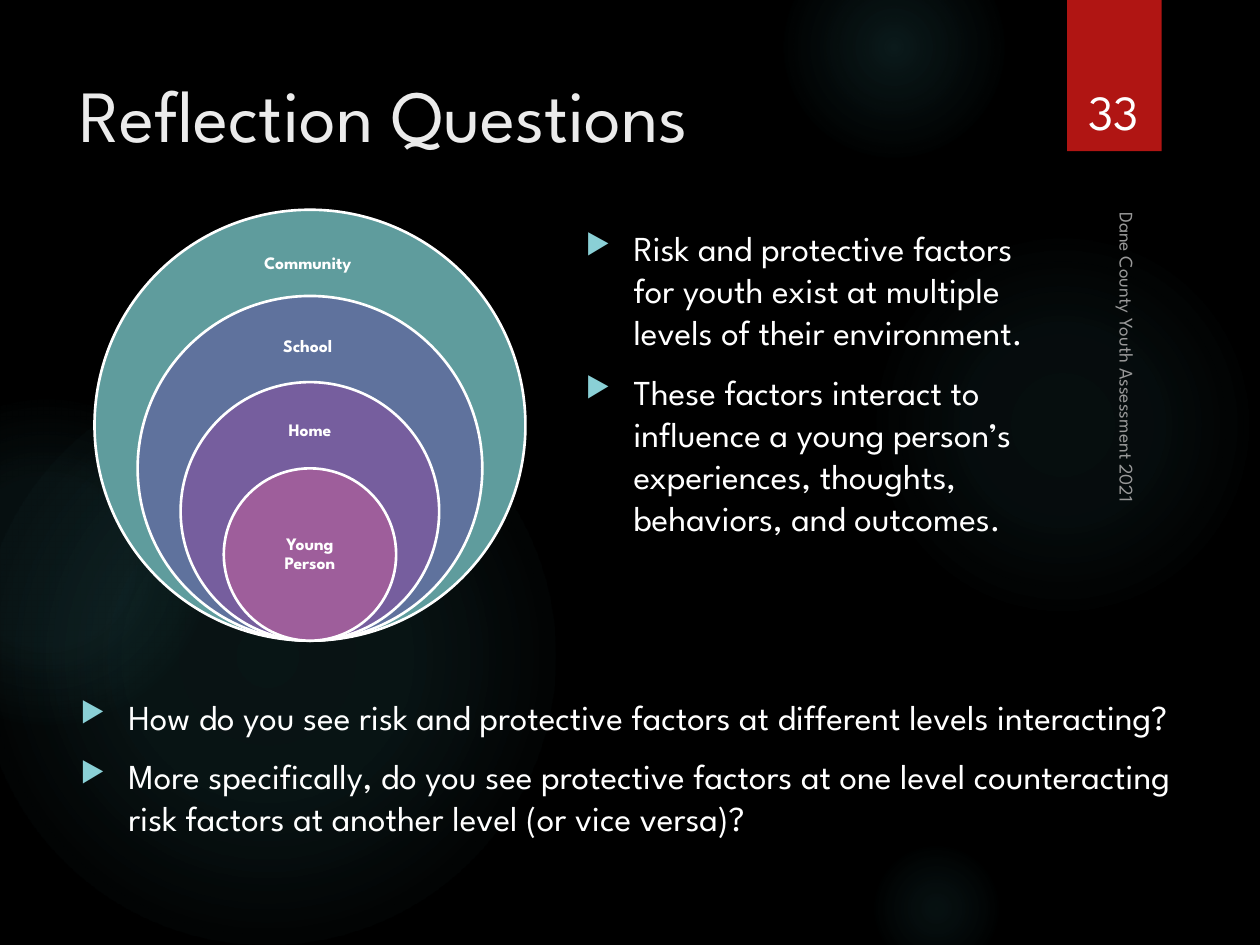
import pptx
import pptx.util
import pptx.dml.color
import pptx.enum.shapes
import pptx.enum.text
import pptx.oxml
import pptx.oxml.ns

RGBColor = pptx.dml.color.RGBColor
Anchor = pptx.enum.text.MSO_ANCHOR
Align = pptx.enum.text.PP_ALIGN
Shape = pptx.enum.shapes.MSO_SHAPE

BLACK = RGBColor(0x00, 0x00, 0x00)
WHITE = RGBColor(0xFF, 0xFF, 0xFF)
TITLE_GREY = RGBColor(0xEB, 0xEB, 0xEB)
FOOTER_GREY = RGBColor(0x99, 0x99, 0x99)
RED = RGBColor(0xB0, 0x15, 0x13)
GLOW = RGBColor(0x50, 0xB9, 0xC1)
BULLET = RGBColor(0x8A, 0xD0, 0xD6)
TEAL = RGBColor(0x5F, 0x9C, 0x9D)
BLUE = RGBColor(0x5F, 0x72, 0x9D)
VIOLET = RGBColor(0x76, 0x5E, 0x9E)
MAGENTA = RGBColor(0x9E, 0x5E, 0x9B)

FONT = "League Spartan"
WIDTH = pptx.util.Inches(10)
HEIGHT = pptx.util.Inches(7.5)

GLOWS = [
    (68.9, 24.4, 30.8, [(0, 7), (36, 6), (69, 0)]),
    (62.2, -6.67, 17.5, [(0, 14), (36, 7), (73, 0)]),
    (68.9, 88.93, 10.8, [(0, 9), (36, 5), (66, 0)]),
    (-1.7, 38.93, 45.8, [(0, 11), (36, 10), (75, 0)]),
    (-9.2, 42.27, 25.8, [(0, 8), (36, 8), (72, 0)]),
]
LEVELS = [
    ("Community ", TEAL, 27.93),
    ("School ", BLUE, 36.73),
    ("Home", VIOLET, 45.6),
    ("Young Person", MAGENTA, 58.67),
]
LEVEL_CENTER = 24.6
LEVEL_BOTTOM = 67.8
OUTER_DIAMETER = 34.2
LABEL_WIDTH = 9.7
LABEL_HEIGHT = 6.8

FACTORS = [
    "Risk and protective factors for youth exist at multiple levels of their environment.",
    "These factors interact to influence a young person’s experiences, thoughts, behaviors, and outcomes.",
]
QUESTIONS = [
    "How do you see risk and protective factors at different levels interacting?",
    "More specifically, do you see protective factors at one level counteracting "
    "risk factors at another level (or vice versa)?",
]


def across(percent):
    return round(WIDTH * percent / 100)


def down(percent):
    return round(HEIGHT * percent / 100)


def area(left, top, width, height):
    return across(left), down(top), across(width), down(height)


def style(paragraph, size, color, align=Align.LEFT, bold=False):
    paragraph.alignment = align
    font = paragraph.font
    font.name, font.size, font.bold = FONT, pptx.util.Pt(size), bold
    font.color.rgb = color


def add_shape(slide, kind, position, color=None):
    shape = slide.shapes.add_shape(kind, *position)
    shape.shadow.inherit = False
    shape.line.fill.background()
    if color is not None:
        shape.fill.solid()
        shape.fill.fore_color.rgb = color
    return shape


def add_glow(slide, left, top, diameter, stops):
    size = across(diameter)
    shape = add_shape(slide, Shape.OVAL, (across(left), down(top), size, size))
    stop_xml = "".join(
        f'<a:gs pos="{place * 1000}"><a:srgbClr val="{GLOW}">'
        f'<a:alpha val="{alpha * 1000}"/></a:srgbClr></a:gs>'
        for place, alpha in stops
    )
    gradient = pptx.oxml.parse_xml(
        f'<a:gradFill {pptx.oxml.ns.nsdecls("a")} rotWithShape="1">'
        f'<a:gsLst>{stop_xml}</a:gsLst><a:path path="circle">'
        '<a:fillToRect l="50000" t="50000" r="50000" b="50000"/></a:path></a:gradFill>'
    )
    shape.element.spPr.find(pptx.oxml.ns.qn("a:prstGeom")).addnext(gradient)


def add_text(slide, position, text, size, color, anchor, align=Align.LEFT, bold=False):
    box = slide.shapes.add_textbox(*position)
    frame = box.text_frame
    frame.word_wrap = True
    frame.vertical_anchor = anchor
    frame.text = text
    style(frame.paragraphs[0], size, color, align, bold)
    return box


def add_bullet(paragraph):
    properties = paragraph._p.get_or_add_pPr()
    indent = pptx.util.Inches(0.38)
    properties.set("marL", str(indent))
    properties.set("indent", str(-indent))
    for xml in (
        f'<a:buClr {{}}><a:srgbClr val="{BULLET}"/></a:buClr>',
        '<a:buSzPct {} val="80000"/>',
        '<a:buChar {} char="▶"/>',
    ):
        properties.append(pptx.oxml.parse_xml(xml.format(pptx.oxml.ns.nsdecls("a"))))


def add_bullets(slide, position, items):
    frame = slide.shapes.add_textbox(*position).text_frame
    frame.word_wrap = True
    frame.text = "\n".join(items)
    for paragraph in frame.paragraphs:
        add_bullet(paragraph)
        paragraph.space_before = pptx.util.Pt(10)
        style(paragraph, 20, WHITE)


def add_level(slide, index, name, color, label_center):
    diameter = across(OUTER_DIAMETER * (1 - index / 5))
    left = across(LEVEL_CENTER) - diameter // 2
    top = down(LEVEL_BOTTOM) - diameter
    circle = add_shape(slide, Shape.OVAL, (left, top, diameter, diameter), color)
    circle.line.color.rgb = WHITE
    circle.line.width = pptx.util.Pt(1.5)
    position = area(LEVEL_CENTER - LABEL_WIDTH / 2, label_center - LABEL_HEIGHT / 2,
                    LABEL_WIDTH, LABEL_HEIGHT)
    label = add_text(slide, position, name, 10, WHITE, Anchor.MIDDLE, Align.CENTER, True)
    frame = label.text_frame
    frame.margin_left = frame.margin_right = pptx.util.Inches(0.08)
    frame.margin_top = frame.margin_bottom = pptx.util.Inches(0.08)
    frame.paragraphs[0].line_spacing = 0.9


def set_title(slide, position, text):
    title = slide.shapes.title
    title.left, title.top, title.width, title.height = position
    title.text_frame.text = text
    title.text_frame.vertical_anchor = Anchor.TOP
    style(title.text_frame.paragraphs[0], 42, TITLE_GREY)


def main():
    presentation = pptx.Presentation()
    presentation.slide_width, presentation.slide_height = WIDTH, HEIGHT
    slide = presentation.slides.add_slide(presentation.slide_layouts[5])
    slide.background.fill.solid()
    slide.background.fill.fore_color.rgb = BLACK
    for glow in GLOWS:
        add_glow(slide, *glow)
    add_shape(slide, Shape.RECTANGLE, area(84.7, 0, 7.5, 16), RED)
    set_title(slide, area(5.3, 6.67, 77.2, 20.4), "Reflection Questions")
    add_bullets(slide, area(45.5, 23.33, 37, 46), FACTORS)
    footer = add_text(slide, area(68.2, 47.6, 42.2, 3.33),
                      "Dane County Youth Assessment 2021", 11, FOOTER_GREY, Anchor.BOTTOM)
    footer.rotation = 90
    add_text(slide, area(84.9, 4.27, 6.9, 11.2), "33", 28, WHITE, Anchor.BOTTOM, Align.CENTER)
    for index, level in enumerate(LEVELS):
        add_level(slide, index, *level)
    add_bullets(slide, area(5.4, 72.93, 92.2, 27.33), QUESTIONS)
    presentation.save("out.pptx")


if __name__ == "__main__":
    main()
